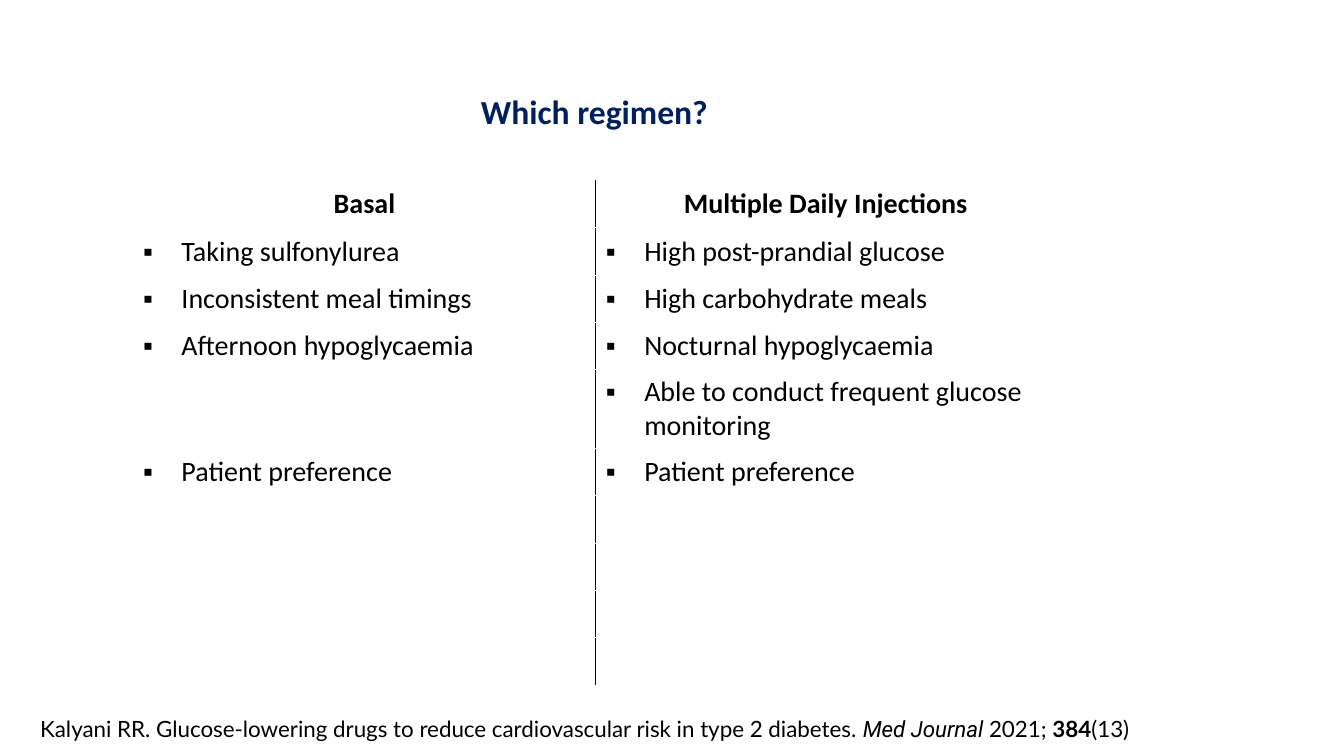
from dataclasses import dataclass
from lxml.etree import SubElement
from pptx import Presentation
from pptx.dml.color import RGBColor
from pptx.enum.text import MSO_ANCHOR, PP_ALIGN
from pptx.oxml import parse_xml
from pptx.oxml.ns import nsdecls, qn
from pptx.util import Inches, Pt


@dataclass(frozen=True)
class Theme:
    navy: str = "002060"
    black: str = "000000"
    white: str = "FFFFFF"
    head: int = 24
    body: int = 20
    note: int = 16
    rule: int = 1
    font: str = "Calibri"
    cite: str = "Lato"
    slant: str = "Roboto"


theme = Theme()
WIDE, HIGH = 13.33, 7.5
ROW, TOP, TALL = 0.47, 0.92, 0.78
INDENT = Inches(0.38)

TITLE = "Which regimen?"
HEADS = ("Basal", "Multiple Daily Injections")
POINTS = (
    ("Taking sulfonylurea", "High post-prandial glucose"),
    ("Inconsistent meal timings", "High carbohydrate meals"),
    ("Afternoon hypoglycaemia", "Nocturnal hypoglycaemia"),
    ("", "Able to conduct frequent glucose monitoring"),
    ("Patient preference", "Patient preference"),
)
SPARE = 4
SOURCE = (
    ("Kalyani RR. Glucose-lowering drugs to reduce cardiovascular risk in type 2 diabetes. ", {}),
    ("Med Journal ", {"font": theme.slant, "italic": True}),
    ("2021; ", {}),
    ("384", {"bold": True}),
    ("(13)", {}),
)


def write(para, text, size=theme.body, font=theme.font, color=theme.black,
          bold=False, italic=False, align=None, bullet=None):
    run = para.add_run()
    run.text = text
    face = run.font
    face.size, face.name = Pt(size), font
    face.bold, face.italic = bold, italic
    face.color.rgb = RGBColor.from_string(color)
    if align is not None:
        para.alignment = align
    if bullet:
        props = para._p.get_or_add_pPr()
        props.set("marL", str(INDENT))
        props.set("indent", str(-INDENT))
        SubElement(props, qn("a:buFont")).set("typeface", "Arial")
        SubElement(props, qn("a:buChar")).set("char", bullet)


def border(cell, side):
    line = parse_xml(
        f'<a:{side} {nsdecls("a")} w="{Pt(theme.rule)}"><a:solidFill>'
        f'<a:srgbClr val="{theme.black}"/></a:solidFill></a:{side}>')
    cell._tc.get_or_add_tcPr().insert(0, line)


def regimens(slide, left, top, width, height):
    lines = (HEADS, *POINTS, *[("", "")] * SPARE)
    frame = slide.shapes.add_table(
        len(lines) + 1, len(HEADS),
        Inches(left), Inches(top), Inches(width), Inches(height))
    table = frame.table
    table.first_row = table.horz_banding = False
    for col, size in zip(table.columns, (4.59, width - 4.59)):
        col.width = Inches(size)
    sizes = [TOP] + [TALL if "" in pair and any(pair) else ROW for pair in lines]
    for row, size in zip(table.rows, sizes):
        row.height = Inches(size)
    for cell in table.iter_cells():
        cell.fill.solid()
        cell.fill.fore_color.rgb = RGBColor.from_string(theme.white)
    title = table.cell(0, 0)
    title.merge(table.cell(0, 1))
    write(title.text_frame.paragraphs[0], TITLE, size=theme.head,
          color=theme.navy, bold=True, align=PP_ALIGN.CENTER)
    for row, pair in enumerate(lines, 1):
        style = ({"bold": True, "align": PP_ALIGN.CENTER} if pair is HEADS
                 else {"bullet": "▪"})
        for col, (text, side) in enumerate(zip(pair, ("lnR", "lnL"))):
            cell = table.cell(row, col)
            cell.vertical_anchor = MSO_ANCHOR.MIDDLE
            border(cell, side)
            if text:
                write(cell.text_frame.paragraphs[0], text, **style)


def citation(slide, left, top, width, height):
    box = slide.shapes.add_textbox(
        Inches(left), Inches(top), Inches(width), Inches(height))
    box.text_frame.word_wrap = True
    para = box.text_frame.paragraphs[0]
    for text, style in SOURCE:
        write(para, text, **{"size": theme.note, "font": theme.cite, **style})


def main():
    deck = Presentation()
    deck.slide_width, deck.slide_height = Inches(WIDE), Inches(HIGH)
    slide = deck.slides.add_slide(deck.slide_layouts[6])
    regimens(slide, 1.32, 0.87, 9.15, 5.93)
    citation(slide, 0.3, 7.05, 11.38, 0.37)
    deck.save("out.pptx")


if __name__ == "__main__":
    main()
